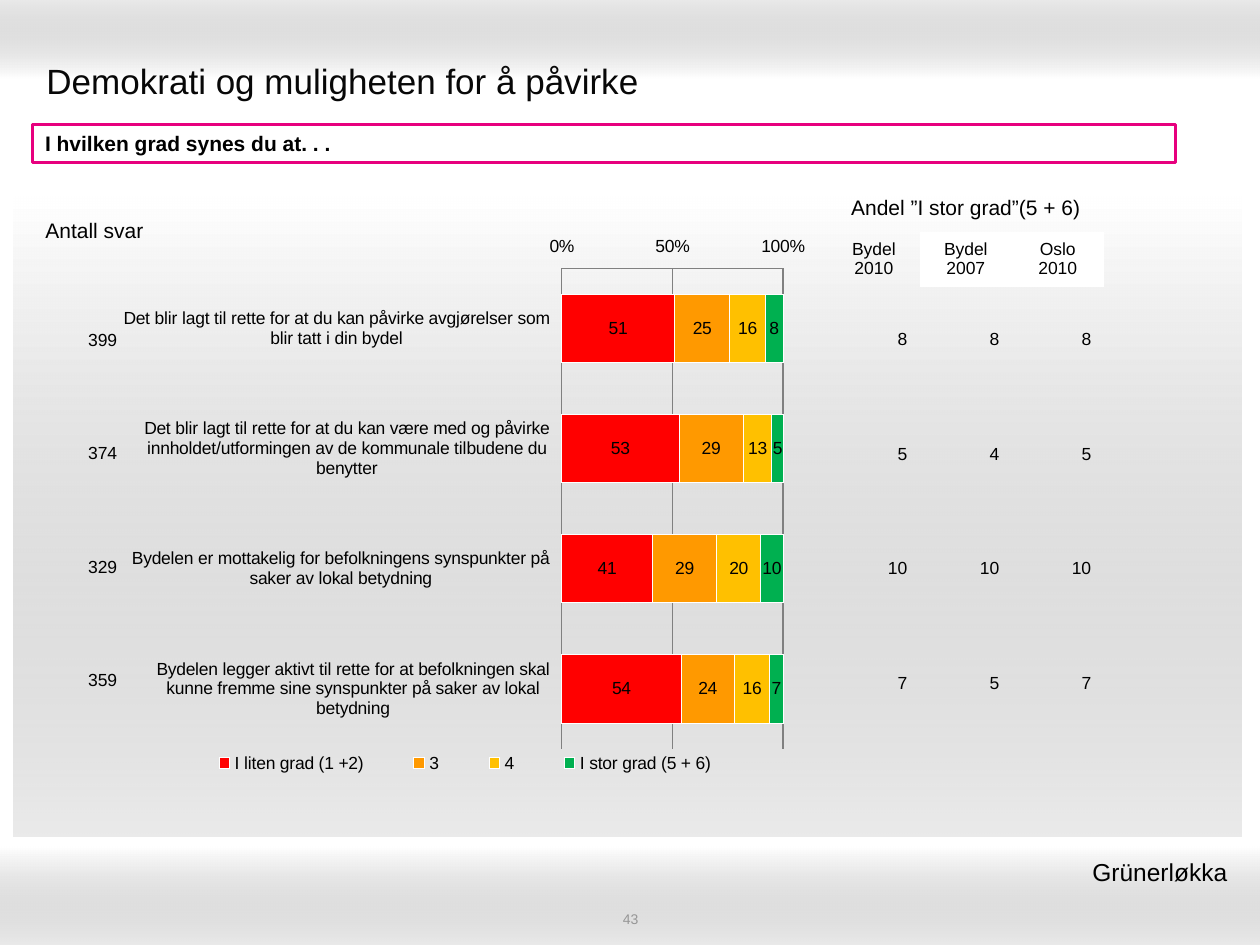
from lxml import etree
from pptx import Presentation
from pptx.chart.data import CategoryChartData as ChartData
from pptx.dml.color import RGBColor
from pptx.enum.chart import XL_CHART_TYPE as Kind, XL_LEGEND_POSITION as Side
from pptx.enum.chart import XL_TICK_LABEL_POSITION as Tick, XL_TICK_MARK as Mark
from pptx.enum.shapes import MSO_SHAPE as Shape
from pptx.enum.text import MSO_ANCHOR as Anchor, PP_ALIGN as Align
from pptx.oxml import parse_xml
from pptx.oxml.ns import nsdecls, qn
from pptx.util import Inches, Pt

PLAIN = "{2D5ABB26-0587-4C30-8999-92F81FD0307C}"


def hue(code):
    return RGBColor.from_string(code)


def layout(x, y, w, h, inner=False):
    target = '<c:layoutTarget val="inner"/>' if inner else ""
    return parse_xml(
        f'<c:layout {nsdecls("c")}><c:manualLayout>{target}'
        '<c:xMode val="edge"/><c:yMode val="edge"/>'
        f'<c:x val="{x}"/><c:y val="{y}"/><c:w val="{w}"/><c:h val="{h}"/>'
        '</c:manualLayout></c:layout>')


class Deck:
    face = "Arial"
    ink = "000000"

    def __init__(self, slide):
        self.slide = slide

    def font(self, font, size, color=None, bold=False):
        font.name = self.face
        font.size = Pt(size)
        font.bold = bold
        font.color.rgb = hue(color or self.ink)

    def lines(self, frame, text, size, align=Align.LEFT, color=None, bold=False):
        for i, line in enumerate(text.split("\n")):
            para = frame.add_paragraph() if i else frame.paragraphs[0]
            para.text = line
            para.alignment = align
            self.font(para.font, size, color, bold)

    def band(self, box, angle):
        shape = self.slide.shapes.add_shape(Shape.RECTANGLE, *map(Inches, box))
        shape.shadow.inherit = False
        shape.line.fill.background()
        shape.fill.gradient()
        shape.fill.gradient_angle = angle
        for stop, code in zip(shape.fill.gradient_stops, ("FFFFFF", "999999")):
            stop.color.rgb = hue(code)
        last = list(shape._element.iter(qn("a:srgbClr")))[-1]
        etree.SubElement(last, qn("a:alpha")).set("val", "20000")

    def text(self, box, text, size, align=Align.LEFT, color=None, anchor=Anchor.MIDDLE):
        frame = self.slide.shapes.add_textbox(*map(Inches, box)).text_frame
        frame.word_wrap = True
        frame.vertical_anchor = anchor
        self.lines(frame, text, size, align, color)

    def frame(self, box, text, size, edge):
        shape = self.slide.shapes.add_shape(Shape.RECTANGLE, *map(Inches, box))
        shape.shadow.inherit = False
        shape.fill.solid()
        shape.fill.fore_color.rgb = hue("FFFFFF")
        shape.line.color.rgb = hue(edge)
        shape.line.width = Pt(2)
        self.lines(shape.text_frame, text, size, bold=True)

    def table(self, spot, wide, highs, rows, sizes, align, white=()):
        count = len(rows[0])
        box = (*spot, wide * count, sum(highs))
        table = self.slide.shapes.add_table(len(rows), count, *map(Inches, box)).table
        table.first_row = table.horz_banding = False
        table._tbl.tblPr.find(qn("a:tableStyleId")).text = PLAIN
        for r, (row, high, size) in enumerate(zip(rows, highs, sizes)):
            table.rows[r].height = Inches(high)
            for c, text in enumerate(row):
                cell = table.cell(r, c)
                cell.vertical_anchor = Anchor.MIDDLE
                if (r, c) in white:
                    cell.fill.solid()
                    cell.fill.fore_color.rgb = hue("FFFFFF")
                else:
                    cell.fill.background()
                if text:
                    self.lines(cell.text_frame, text, size, align)
        return table

    def chart(self, box, cats, series):
        data = ChartData(number_format="0")
        data.categories = cats
        for name, _, vals in series:
            data.add_series(name, vals)
        chart = self.slide.shapes.add_chart(
            Kind.BAR_STACKED, *map(Inches, box), data).chart
        self.font(chart.font, 10)
        chart.has_title = False
        plot = chart.plots[0]
        plot.gap_width, plot.overlap = 75, 100
        plot.vary_by_categories = False
        for item, (_, color, _) in zip(plot.series, series):
            item.format.fill.solid()
            item.format.fill.fore_color.rgb = hue(color)
            item.format.line.color.rgb = hue("FFFFFF")
            labels = item.data_labels
            labels.show_value = True
            labels.number_format = "0"
            labels.number_format_is_linked = False
            self.font(labels.font, 10)
        cat, val = chart.category_axis, chart.value_axis
        cat.reverse_order = True
        cat.major_tick_mark = Mark.NONE
        val.major_tick_mark = Mark.INSIDE
        val.minimum_scale, val.maximum_scale, val.major_unit = 0, 100, 50
        val.has_major_gridlines = True
        val.tick_labels.number_format = "General\\%"
        val.tick_labels.number_format_is_linked = False
        for axis in (cat, val):
            axis.tick_label_position = Tick.LOW
            axis.format.line.color.rgb = hue("808080")
        val.major_gridlines.format.line.color.rgb = hue("808080")
        chart.has_legend = True
        legend = chart.legend
        legend.position = Side.BOTTOM
        legend.include_in_layout = False
        self.font(legend.font, 10)
        area = chart._chartSpace.chart.plotArea
        for old in area.findall(qn("c:layout")):
            area.remove(old)
        area.insert(0, layout(0.63, 0.075, 0.32, 0.84, True))
        for old in legend._element.findall(qn("c:layout")):
            legend._element.remove(old)
        legend._element.find(qn("c:legendPos")).addnext(layout(0.07, 0.91, 0.84, 0.06))


def main():
    prs = Presentation()
    prs.slide_width, prs.slide_height = Inches(10), Inches(7.5)
    deck = Deck(prs.slides.add_slide(prs.slide_layouts[6]))

    deck.band((0, 0, 10, 0.62), 90)
    deck.band((0, 6.72, 10, 0.78), 270)
    deck.band((0.11, 1.56, 9.74, 5.08), 270)
    deck.text((0.27, 0.36, 9.45, 0.55), "Demokrati og muligheten for å påvirke",
              20, color="080808")
    deck.text((3.42, 7.22, 3.17, 0.14), "43", 8, Align.CENTER, "969696")
    deck.frame((0.26, 0.99, 9.07, 0.3), "I hvilken grad synes du at. . .", 12, "E7007E")

    cats = [
        "Det blir lagt til rette for at du kan påvirke avgjørelser som blir tatt i din bydel",
        "Det blir lagt til rette for at du kan være med og påvirke "
        "innholdet/utformingen av de kommunale tilbudene du benytter",
        "Bydelen er mottakelig for befolkningens synspunkter på saker av lokal betydning",
        "Bydelen legger aktivt til rette for at befolkningen skal kunne fremme "
        "sine synspunkter på saker av lokal betydning",
    ]
    deck.chart((0.98, 1.79, 5.51, 4.54), cats, [
        ("I liten grad (1 +2)", "FF0000", (51, 53, 41, 54)),
        ("3", "FF9900", (25, 29, 29, 24)),
        ("4", "FFC000", (16, 13, 20, 16)),
        ("I stor grad (5 + 6)", "00B050", (8, 5, 10, 7)),
    ])

    shares = [("8", "8", "8"), ("5", "4", "5"), ("10", "10", "10"), ("7", "5", "7")]
    deck.table((6.57, 2.24), 0.73, [0.91] * 4, shares, [10] * 4, Align.RIGHT)
    head = [("Andel ”I stor grad”(5 + 6)", "", ""),
            ("Bydel\n2010", "Bydel\n2007", "Oslo\n2010")]
    table = deck.table((6.57, 1.47), 0.73, [0.37, 0.43], head, [12, 10],
                       Align.CENTER, {(1, 1), (1, 2)})
    table.cell(0, 0).merge(table.cell(0, 2))
    counts = [("399",), ("374",), ("329",), ("359",)]
    deck.table((0.51, 2.25), 0.52, [0.9] * 4, counts, [10] * 4, Align.RIGHT)
    deck.table((0.04, 1.54), 1.42, [0.59], [("Antall svar",)], [12], Align.CENTER)
    deck.text((6.1, 6.75, 3.74, 0.34), "Grünerløkka", 14, Align.RIGHT, anchor=Anchor.TOP)
    prs.save("out.pptx")


if __name__ == "__main__":
    main()
